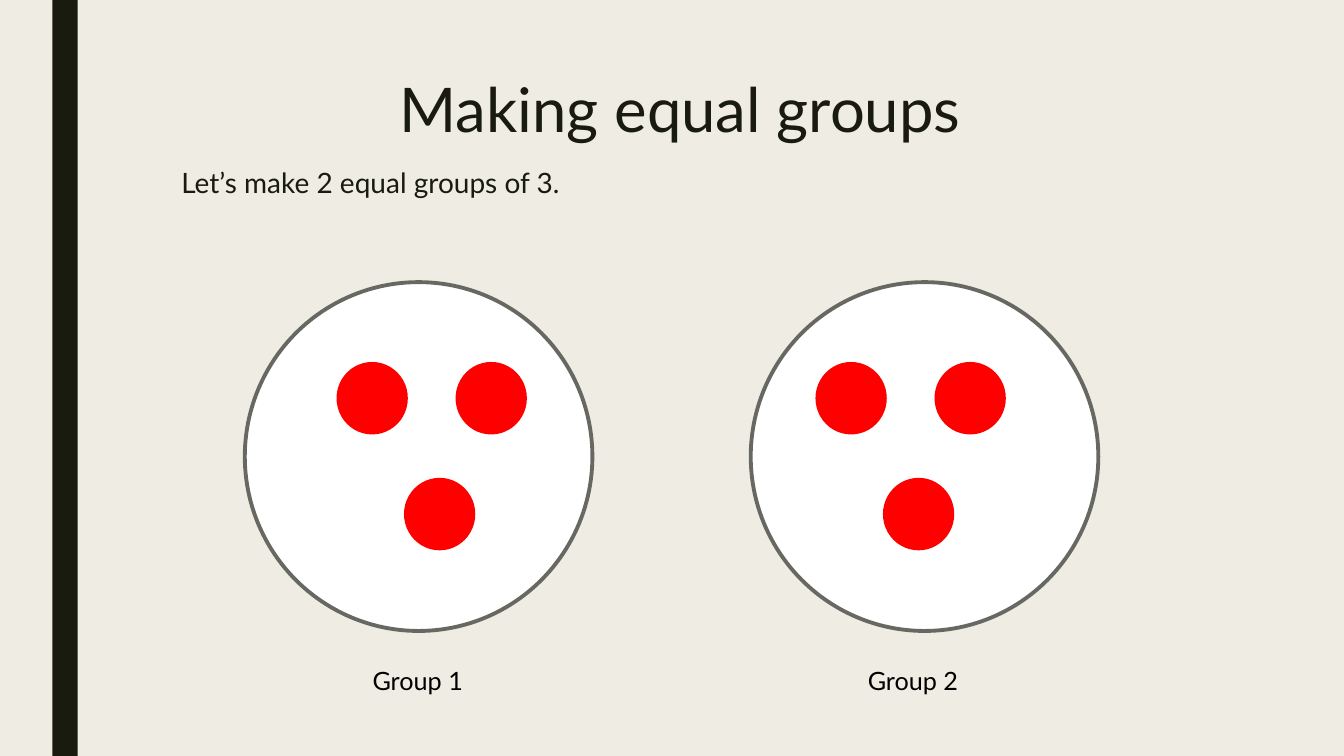
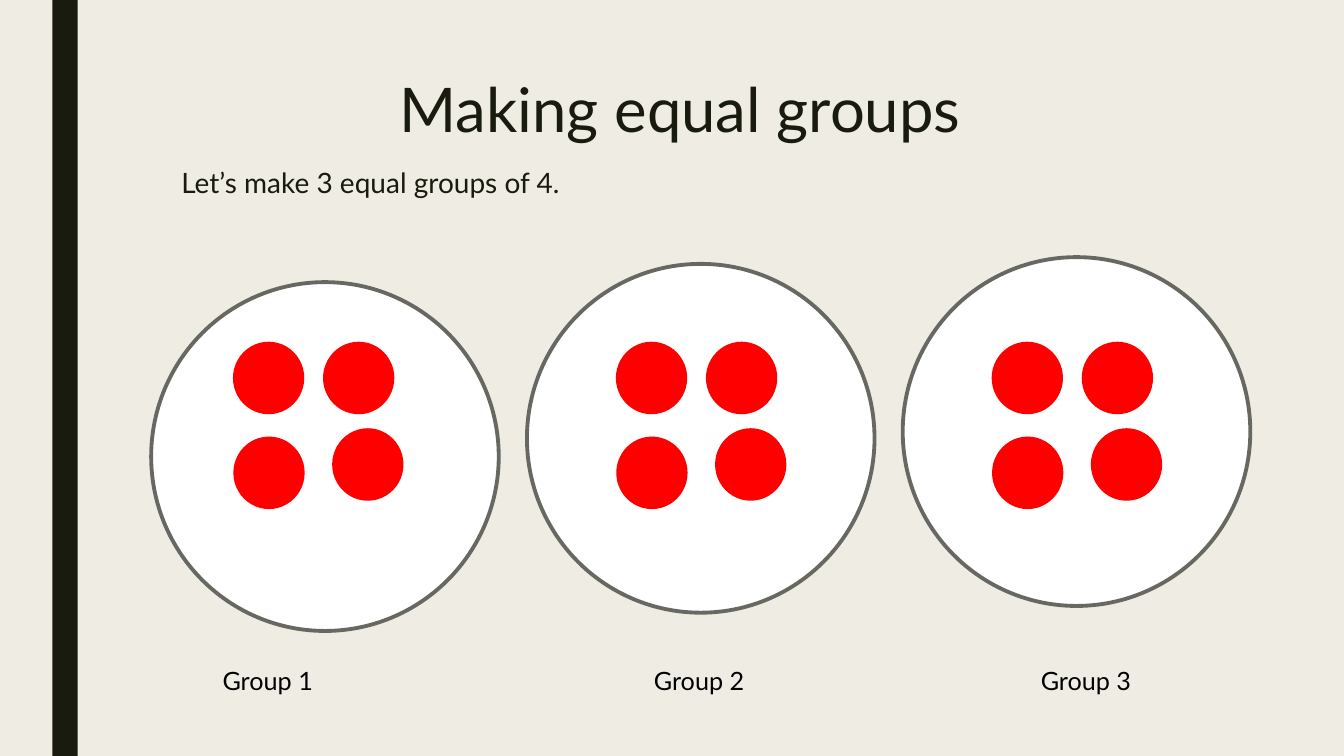
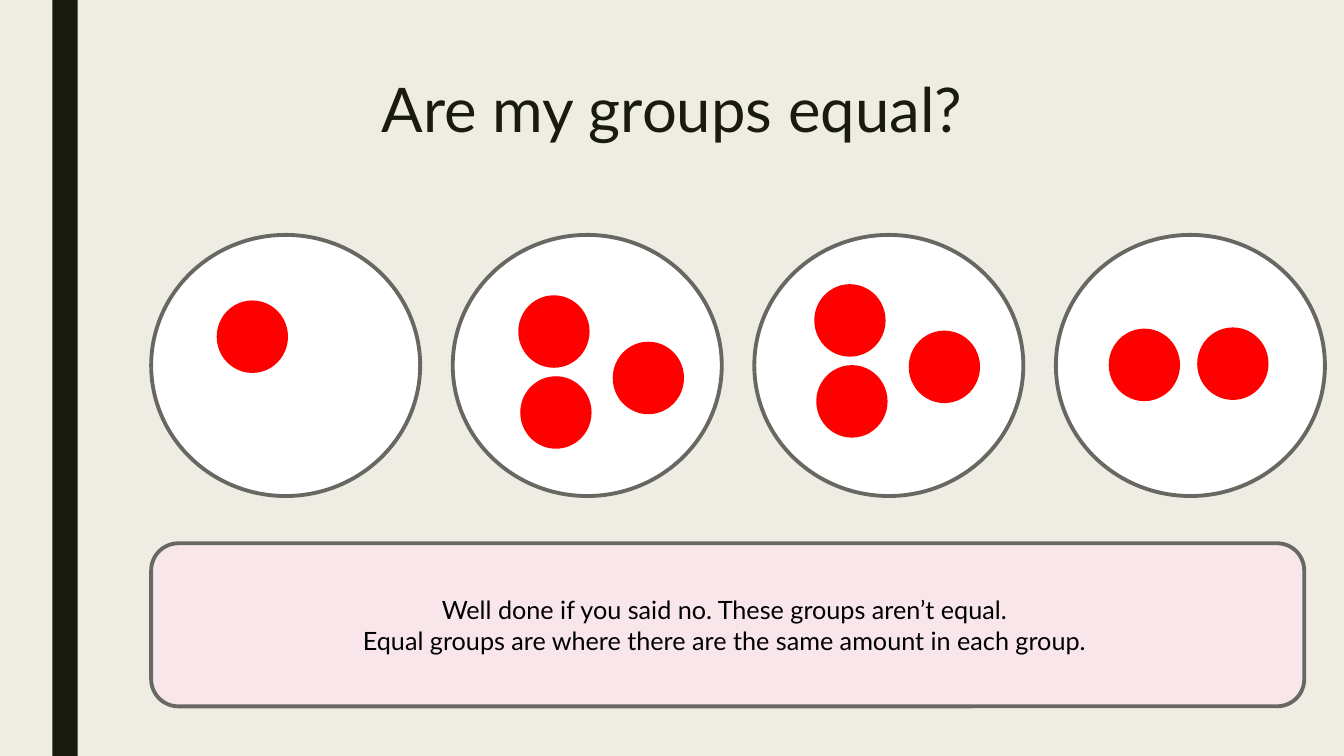
import pptx
import pptx.dml.color
import pptx.enum.shapes
import pptx.enum.text
import pptx.util

Cm = pptx.util.Cm
Pt = pptx.util.Pt
SHAPE = pptx.enum.shapes.MSO_SHAPE
ALIGN = pptx.enum.text.PP_ALIGN
ANCHOR = pptx.enum.text.MSO_ANCHOR

# Shared style
FONT = "Lato"
PAPER, INK, BLACK = "EFEDE3", "191B0E", "000000"
WHITE, GREY, RED, PINK = "FFFFFF", "686863", "FF0000", "F9E6EA"
OUTLINE = 2.75
COUNTER_SIZE = (1.7, 1.73)
LABEL_TOP = 16.64

# Counter arrangements: offsets from the first counter
TRIANGLE = [(0, 0), (3, 0), (1.7, 2.92)]
SQUARE = [(0, 0), (2.27, 0), (0.01, 2.39), (2.5, 2.18)]
SINGLE = [(0, 0)]
SIDEWAYS = [(0, 0), (0.05, 2.04), (2.38, 1.17)]
PAIR = [(0, 0), (2.23, -0.03)]


def colour(value):
    return pptx.dml.color.RGBColor.from_string(value)


def write(frame, text, size=18, ink=BLACK, align=ALIGN.LEFT,
          anchor=ANCHOR.TOP, spacing=None, wrap=True):
    """Fill a text frame, one paragraph per line of text."""
    frame.word_wrap = wrap
    frame.vertical_anchor = anchor
    for index, line in enumerate(text.split("\n")):
        para = frame.add_paragraph() if index else frame.paragraphs[0]
        para.alignment = align
        if spacing:
            para.line_spacing = spacing
        span = para.add_run()
        span.text = line
        span.font.name = FONT
        span.font.size = Pt(size)
        span.font.color.rgb = colour(ink)


def add_text(page, left, top, width, height, text, **style):
    box = page.shapes.add_textbox(Cm(left), Cm(top), Cm(width), Cm(height))
    write(box.text_frame, text, **style)


def add_shape(page, kind, left, top, width, height, fill, line=None):
    shape = page.shapes.add_shape(kind, Cm(left), Cm(top), Cm(width), Cm(height))
    shape.shadow.inherit = False
    shape.fill.solid()
    shape.fill.fore_color.rgb = colour(fill)
    if line:
        shape.line.color.rgb = colour(line)
        shape.line.width = Pt(OUTLINE)
    else:
        shape.line.fill.background()
    return shape


def add_plate(page, left, top, width=8.76, height=8.79):
    add_shape(page, SHAPE.OVAL, left, top, width, height, WHITE, GREY)


def add_counters(page, left, top, offsets):
    for across, down in offsets:
        add_shape(page, SHAPE.OVAL, left + across, top + down,
                  *COUNTER_SIZE, RED, RED)


def add_labels(page, lefts):
    for number, left in enumerate(lefts, 1):
        add_text(page, left, LABEL_TOP, 2.84, 1.02, f"Group {number}", wrap=False)


def add_page(deck, title, task=None):
    """Blank page with the side band, title and optional task line."""
    page = deck.slides.add_slide(deck.slide_layouts[6])
    add_shape(page, SHAPE.RECTANGLE, 1.32, 0, 0.64, 19.05, INK)
    add_text(page, 3.81, 1.9, 26.67, 2.2, title, size=44, ink=INK,
             align=ALIGN.CENTER, spacing=0.89)
    if task:
        add_text(page, 4.32, 4.11, 26.67, 1.17, task, size=20, ink=INK,
                 spacing=0.94)
    return page


def two_groups(deck):
    page = add_page(deck, "Making equal groups", "Let’s make 2 equal groups of 3.")
    for plate_left, counter_left in [(6.17, 8.53), (18.92, 20.6)]:
        add_plate(page, plate_left, 7.11)
        add_counters(page, counter_left, 9.17, TRIANGLE)
    add_labels(page, [9.14, 21.62])


def three_groups(deck):
    page = add_page(deck, "Making equal groups", "Let’s make 3 equal groups of 4.")
    groups = [(7.11, 5.92), (6.65, 15.57), (6.48, 25.04)]
    for index, (plate_top, counter_left) in enumerate(groups):
        add_plate(page, 3.81 + index * 9.47, plate_top)
        add_counters(page, counter_left, 8.66, SQUARE)
    add_labels(page, [5.36, 16.23, 25.98])


def unequal_groups(deck):
    page = add_page(deck, "Are my groups equal? ")
    groups = [(5.51, 7.62, SINGLE), (13.11, 7.49, SIDEWAYS),
              (20.57, 7.21, SIDEWAYS), (27.99, 8.33, PAIR)]
    for index, (left, top, offsets) in enumerate(groups):
        add_plate(page, 3.81 + index * 7.6, 5.92, 6.78, 6.58)
        add_counters(page, left, top, offsets)
    answer = add_shape(page, SHAPE.ROUNDED_RECTANGLE, 3.81, 13.69, 29.06, 4.11,
                       PINK, GREY)
    write(answer.text_frame,
          "Well done if you said no. These groups aren’t equal. \n"
          "Equal groups are where there are the same amount in each group. ",
          align=ALIGN.CENTER, anchor=ANCHOR.MIDDLE)


def main():
    deck = pptx.Presentation()
    deck.slide_width, deck.slide_height = Cm(33.87), Cm(19.05)
    backdrop = deck.slide_master.background.fill
    backdrop.solid()
    backdrop.fore_color.rgb = colour(PAPER)
    two_groups(deck)
    three_groups(deck)
    unequal_groups(deck)
    deck.save("out.pptx")


if __name__ == "__main__":
    main()
